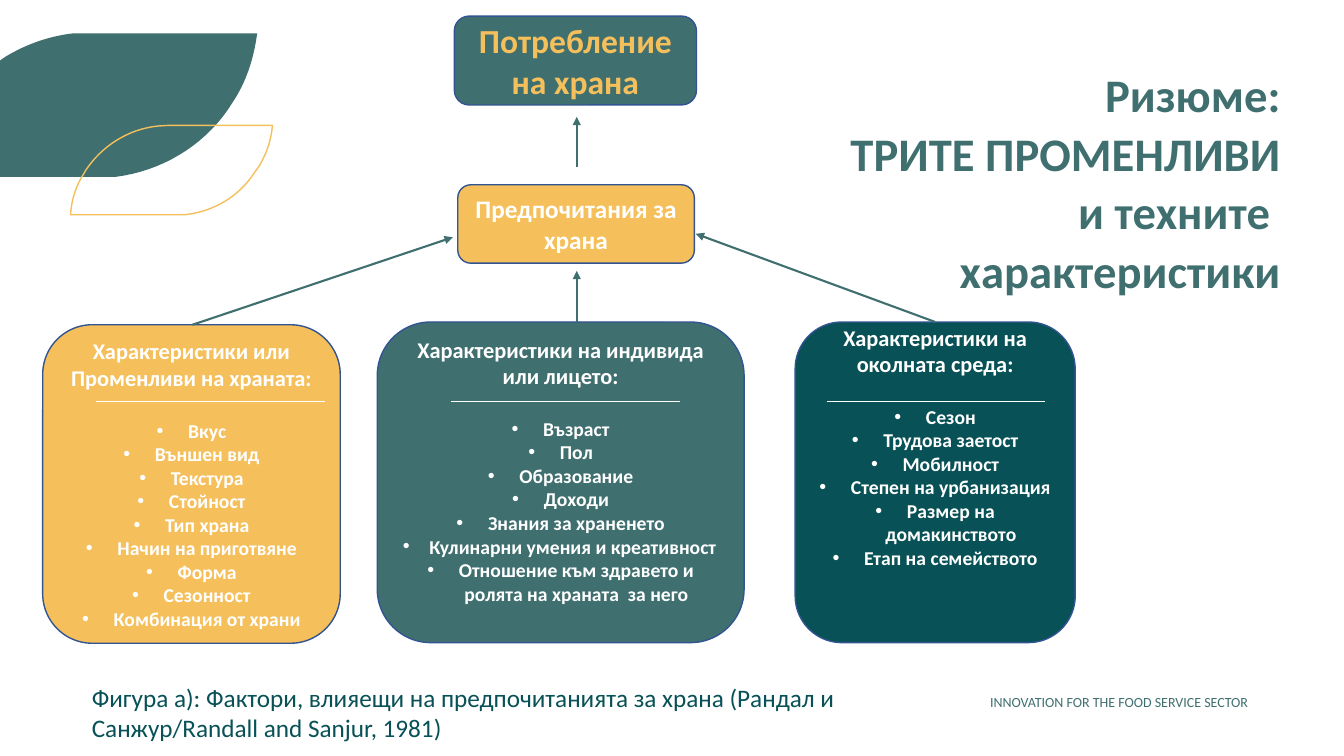
"""Build the slide on three groups of factors that shape food preferences."""
from lxml.etree import SubElement
from pptx import Presentation
from pptx.dml.color import RGBColor
from pptx.enum.shapes import MSO_CONNECTOR as Connector, MSO_SHAPE as Shape
from pptx.enum.text import MSO_ANCHOR as Anchor, MSO_AUTO_SIZE as Fit, PP_ALIGN as Align
from pptx.oxml.ns import qn
from pptx.util import Pt

TEAL, GOLD, DARK, WHITE, BORDER = "406F70", "F5C05B", "085156", "FFFFFF", "325491"
HANG = 22.5
colour = RGBColor.from_string


def write(frame, lines, size, ink, bold=False, align=Align.LEFT):
    """Fill a text frame with one paragraph per line and format it."""
    frame.word_wrap = True
    frame.text = "\n".join(lines)
    for para in frame.paragraphs:
        para.alignment = align
        for span in para.runs:
            span.font.name = "Calibri"
            span.font.size = Pt(size)
            span.font.bold = bold
            span.font.color.rgb = colour(ink)


def trace(page, start, steps):
    """Draw a closed outline; steps are line ends or cubic curves."""
    points, (x, y) = [], start
    for step in steps:
        if len(step) == 6:
            a, b, c, d, e, f = step
            for t in [n / 16 for n in range(1, 17)]:
                s = 1 - t
                points.append((s**3 * x + 3 * s * s * t * a + 3 * s * t * t * c + t**3 * e,
                               s**3 * y + 3 * s * s * t * b + 3 * s * t * t * d + t**3 * f))
        else:
            points.append(step)
        x, y = points[-1]
    builder = page.shapes.build_freeform(Pt(start[0]), Pt(start[1]))
    builder.add_line_segments([(Pt(px), Pt(py)) for px, py in points], close=True)
    leaf = builder.convert_to_shape()
    leaf.shadow.inherit = False
    return leaf


deck = Presentation()
deck.slide_width, deck.slide_height = Pt(960), Pt(540)
page = deck.slides.add_slide(deck.slide_layouts[5])

solid_leaf = trace(page, (62.6, 23.8), [
    (52.6, 23.8), (34.6, 25.9, 18.7, 31.7, 4.3, 40.3), (0, 43.2), (0, 126.4), (82.1, 126.4),
    (115.2, 122.4, 144.7, 104.4, 162.7, 78.5), (167.8, 70.6),
    (176.4, 56.9, 181.4, 41, 183.6, 24.5), (183.6, 23.8)])
solid_leaf.fill.solid()
solid_leaf.fill.fore_color.rgb = colour(TEAL)
solid_leaf.line.fill.background()

outline_leaf = trace(page, (119.5, 89.6), [
    (194.6, 89.6), (193.7, 100.8, 190.1, 110.2, 185, 118.8), (181.4, 123.8),
    (170.6, 140.4, 152.6, 151.2, 131.8, 153.4), (50.4, 153.4),
    (51.1, 141.8, 54.7, 131.8, 60.5, 123.1), (61.2, 121.7),
    (72.7, 104.4, 91.4, 92.2, 113, 90)])
outline_leaf.fill.background()
outline_leaf.line.color.rgb = colour(GOLD)
outline_leaf.line.width = Pt(1)

title = page.shapes.title
title.left, title.top, title.width, title.height = Pt(218), Pt(51), Pt(704), Pt(178.5)
write(title.text_frame, ["Ризюме:", "ТРИТЕ ПРОМЕНЛИВИ", "и техните ", "характеристики"],
      33.3, TEAL, True, Align.RIGHT)
title.text_frame.vertical_anchor = Anchor.TOP
title.text_frame.auto_size = Fit.NONE
for index, para in enumerate(title.text_frame.paragraphs):
    para.line_spacing = 0.8
    para.space_before = Pt(10 if index else 0)

tight_line = "Кулинарни умения и креативност"
boxes = [
    (30.5, 232, 212.5, 227.5, GOLD, WHITE, 16, 0, "Характеристики или Променливи на храната:",
     ["Вкус", "Външен вид", "Текстура", "Стойност", "Тип храна", "Начин на приготвяне",
      "Форма", "Сезонност", "Комбинация от храни"]),
    (269.5, 230, 262, 229, TEAL, WHITE, 16, 1, "Характеристики на индивида или лицето:",
     ["Възраст", "Пол", "Образование", "Доходи", "Знания за храненето", tight_line,
      "Отношение към здравето и ролята на храната  за него"]),
    (568, 230, 200, 229, DARK, WHITE, 16, 3, "Характеристики на околната среда:",
     ["Сезон", "Трудова заетост", "Мобилност", "Степен на урбанизация",
      "Размер на домакинството", "Етап на семейството"]),
    (327, 132, 169, 56, GOLD, WHITE, 18, 0, "Предпочитания за храна", []),
    (324.5, 11.5, 173, 63.5, TEAL, GOLD, 24, 0, "Потребление на храна", []),
]
for left, top, width, height, fill, ink, size, spare_lines, heading, factors in boxes:
    box = page.shapes.add_shape(Shape.ROUNDED_RECTANGLE, Pt(left), Pt(top), Pt(width), Pt(height))
    box.shadow.inherit = False
    box.fill.solid()
    box.fill.fore_color.rgb = colour(fill)
    box.line.color.rgb = colour(BORDER)
    box.line.width = Pt(1)
    frame = box.text_frame
    frame.vertical_anchor = Anchor.MIDDLE
    frame.margin_bottom = Pt(3.6 + 17 * spare_lines)
    write(frame, [heading] + factors, size, ink, True, Align.CENTER)
    for index, para in enumerate(frame.paragraphs[1:]):
        properties = para._p.get_or_add_pPr()
        properties.set("marL", str(Pt(17.5 if para.text == tight_line else HANG)))
        properties.set("indent", str(-Pt(HANG)))
        SubElement(properties, qn("a:buFont")).set("typeface", "Arial")
        SubElement(properties, qn("a:buChar")).set("char", "•")
        para.space_before = Pt(0 if index else 19.5)
        para.runs[0].font.size = Pt(14)

for left, top, width, height, text, size, ink, align in [
    (682, 492, 216.5, 19.5, "INNOVATION FOR THE FOOD SERVICE SECTOR", 10, TEAL, Align.RIGHT),
    (58.5, 484, 595.5, 51, "Фигура a): Фактори, влияещи на предпочитанията за храна "
     "(Рандал и Санжур/Randall and Sanjur, 1981)", 18, DARK, Align.LEFT),
]:
    label = page.shapes.add_textbox(Pt(left), Pt(top), Pt(width), Pt(height))
    write(label.text_frame, [text], size, ink, align=align)

arrows = [(137.5, 232, 323.5, 169.5), (412, 230, 412, 193.5),
          (668, 230, 497, 167), (412, 119.5, 412, 83.5)]
dividers = [(68.5, 286.5, 232, 286.5), (322, 286.5, 485.5, 286.5), (590.5, 286.5, 746.5, 286.5)]
for ends in arrows + dividers:
    link = page.shapes.add_connector(Connector.STRAIGHT, *[Pt(value) for value in ends])
    is_arrow = ends in arrows
    link.line.color.rgb = colour(TEAL if is_arrow else WHITE)
    link.line.width = Pt(1.5 if is_arrow else 0.5)
    if is_arrow:
        SubElement(link.line._get_or_add_ln(), qn("a:tailEnd")).set("type", "triangle")
    SubElement(link._element.spPr, qn("a:effectLst"))

deck.save("out.pptx")
